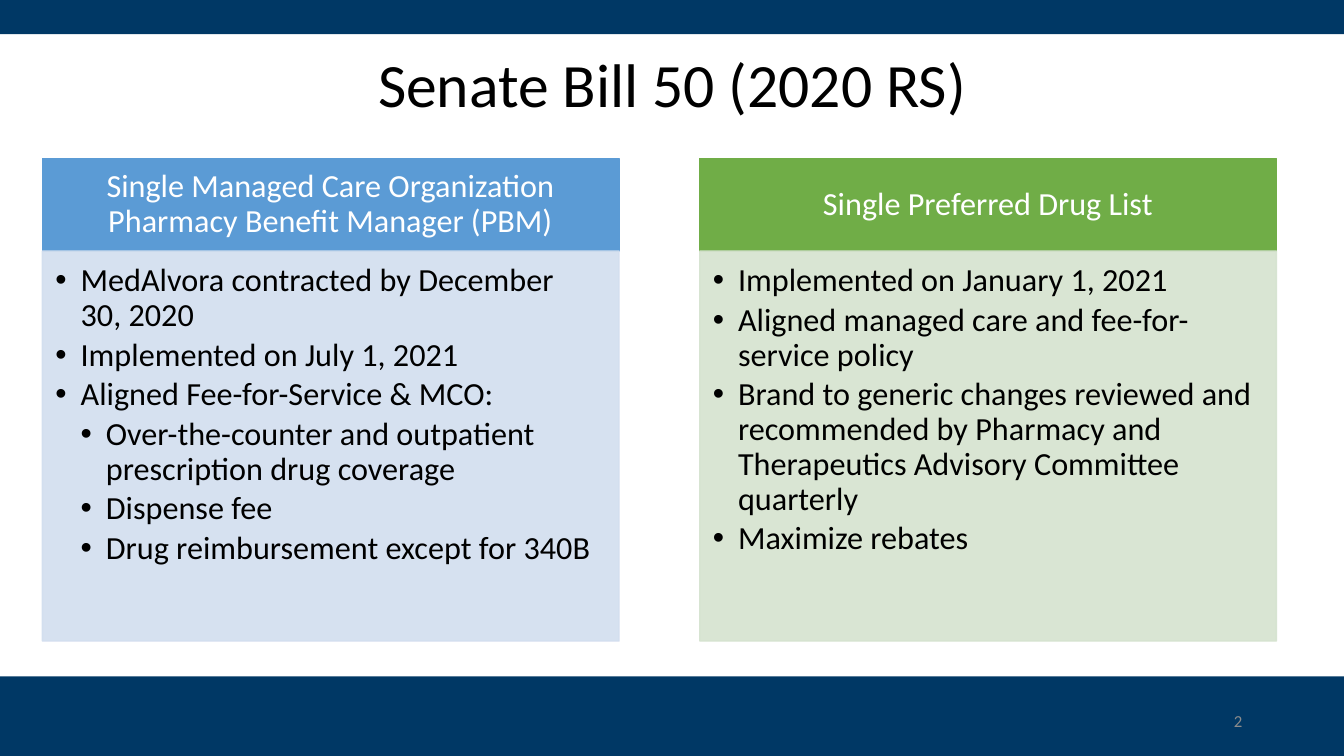
from lxml import etree
from pptx import Presentation
from pptx.dml.color import RGBColor
from pptx.enum.shapes import MSO_SHAPE
from pptx.enum.text import MSO_ANCHOR, PP_ALIGN
from pptx.oxml.ns import qn
from pptx.util import Inches, Pt

RECTANGLE = MSO_SHAPE.RECTANGLE
TOP, MIDDLE = MSO_ANCHOR.TOP, MSO_ANCHOR.MIDDLE
LEFT, CENTER, RIGHT = PP_ALIGN.LEFT, PP_ALIGN.CENTER, PP_ALIGN.RIGHT

COLORS = {
    "navy": "003865", "black": "000000", "white": "FFFFFF", "gray": "8C8C8C",
    "blue": "5B9BD5", "pale blue": "D2DEEF",
    "green": "70AD47", "pale green": "D5E3CF",
}
TITLE = "Senate Bill 50 (2020 RS)"
PAGE_NUMBER = "2"
TOPICS = [
    {
        "heading": "Single Managed Care Organization Pharmacy Benefit Manager (PBM)",
        "color": "blue",
        "points": [
            (1, "MedAlvora contracted by December 30, 2020"),
            (1, "Implemented on July 1, 2021"),
            (1, "Aligned Fee-for-Service & MCO:"),
            (2, "Over-the-counter and outpatient prescription drug coverage"),
            (2, "Dispense fee"),
            (2, "Drug reimbursement except for 340B"),
        ],
    },
    {
        "heading": "Single Preferred Drug List",
        "color": "green",
        "points": [
            (1, "Implemented on January 1, 2021"),
            (1, "Aligned managed care and fee-for-service policy"),
            (1, "Brand to generic changes reviewed and recommended by Pharmacy "
                "and Therapeutics Advisory Committee quarterly"),
            (1, "Maximize rebates"),
        ],
    },
]
SLIDE_WIDTH, SLIDE_HEIGHT = 13.33, 7.5
COLUMN_LEFT, COLUMN_STEP, COLUMN_WIDTH = 0.42, 6.52, 5.72
HEADING_TOP, HEADING_HEIGHT, BODY_HEIGHT = 1.57, 0.92, 3.87
BULLET_INDENT = 0.25


def rgb(name):
    return RGBColor.from_string(COLORS[name])


def add_block(place, color, outlined=False, opacity=None):
    block = slide.shapes.add_shape(RECTANGLE, *map(Inches, place))
    block.shadow.inherit = False
    block.fill.solid()
    block.fill.fore_color.rgb = rgb(color)
    if outlined:
        block.line.color.rgb = rgb(color)
        block.line.width = Pt(1)
    else:
        block.line.fill.background()
    if opacity:
        for tint in block._element.spPr.iter(qn("a:srgbClr")):
            etree.SubElement(tint, qn("a:alpha"), val=str(opacity * 1000))
    return block


def write(holder, lines, *, size, color, align=LEFT, anchor=MIDDLE,
          margins=(0.1, 0.05, 0.1, 0.05), spacing=1.0, after=0):
    frame = holder.text_frame
    frame.word_wrap = True
    frame.vertical_anchor = anchor
    (frame.margin_left, frame.margin_top,
     frame.margin_right, frame.margin_bottom) = map(Inches, margins)
    for index, (level, text) in enumerate(lines):
        paragraph = frame.add_paragraph() if index else frame.paragraphs[0]
        paragraph.text = text
        paragraph.alignment = align
        paragraph.line_spacing = spacing
        paragraph.space_after = Pt(after)
        if level:
            paragraph.level = level
            properties = paragraph._p.get_or_add_pPr()
            properties.set("marL", str(Inches(level * BULLET_INDENT)))
            properties.set("indent", str(-Inches(BULLET_INDENT)))
            etree.SubElement(properties, qn("a:buFont"), typeface="Arial")
            etree.SubElement(properties, qn("a:buChar"), char="•")
        font = paragraph.runs[0].font
        font.name = "Calibri"
        font.size = Pt(size)
        font.color.rgb = rgb(color)


presentation = Presentation()
presentation.slide_width = Inches(SLIDE_WIDTH)
presentation.slide_height = Inches(SLIDE_HEIGHT)
slide = presentation.slides.add_slide(presentation.slide_layouts[6])

for band_top, band_height in [(0, 0.34), (6.71, 0.79)]:
    add_block((0, band_top, SLIDE_WIDTH, band_height), "navy")

title = slide.shapes.add_textbox(*map(Inches, (0.92, 0.31, 11.5, 1.12)))
write(title, [(0, TITLE)], size=44, color="black", align=CENTER, spacing=0.9)

page_number = slide.shapes.add_textbox(*map(Inches, (9.42, 6.95, 3, 0.4)))
write(page_number, [(0, PAGE_NUMBER)], size=12, color="gray", align=RIGHT)

for column, topic in enumerate(TOPICS):
    left = COLUMN_LEFT + column * COLUMN_STEP
    heading = add_block((left, HEADING_TOP, COLUMN_WIDTH, HEADING_HEIGHT),
                        topic["color"], outlined=True)
    write(heading, [(0, topic["heading"])], size=23, color="white", align=CENTER,
          margins=(0.18, 0.1, 0.18, 0.1), spacing=0.9)
    body = add_block((left, HEADING_TOP + HEADING_HEIGHT, COLUMN_WIDTH, BODY_HEIGHT),
                     "pale " + topic["color"], outlined=True, opacity=90)
    write(body, topic["points"], size=23, color="black", anchor=TOP,
          margins=(0.13, 0.13, 0.18, 0.2), spacing=0.9, after=3.5)

presentation.save("out.pptx")
